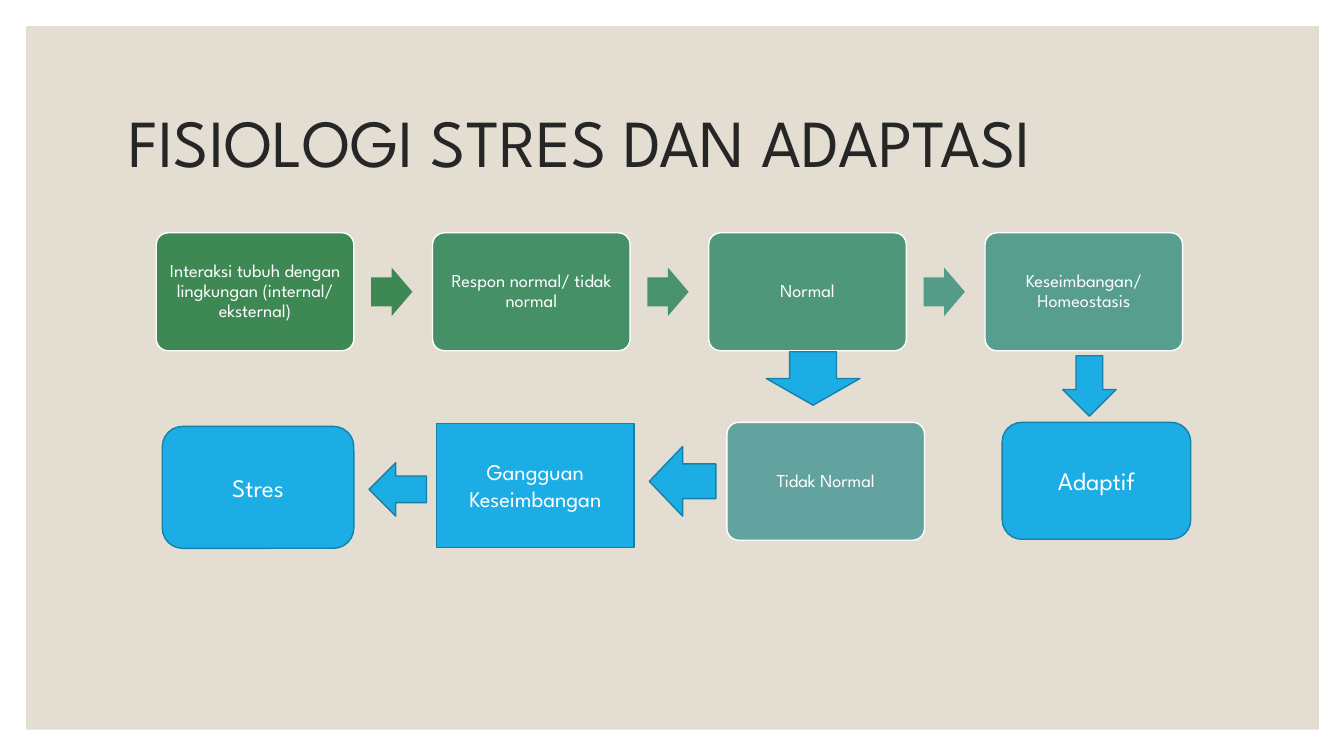
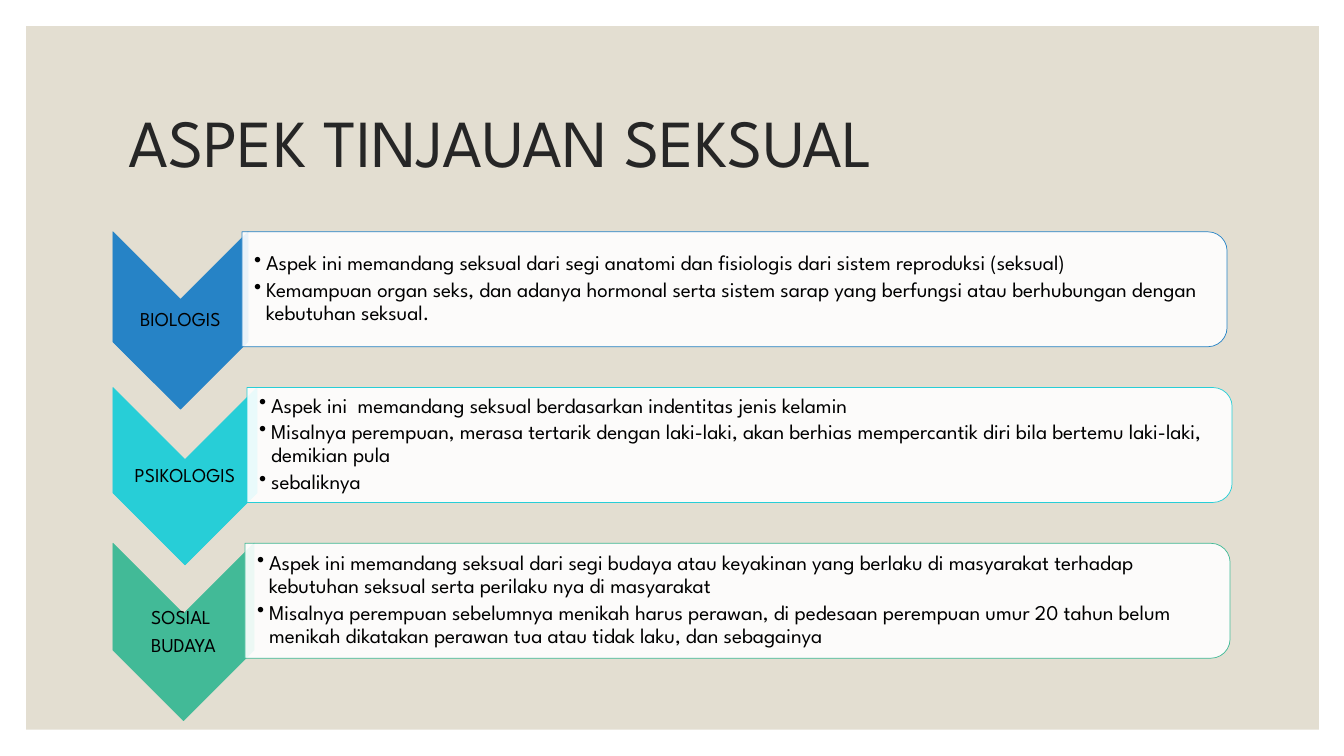
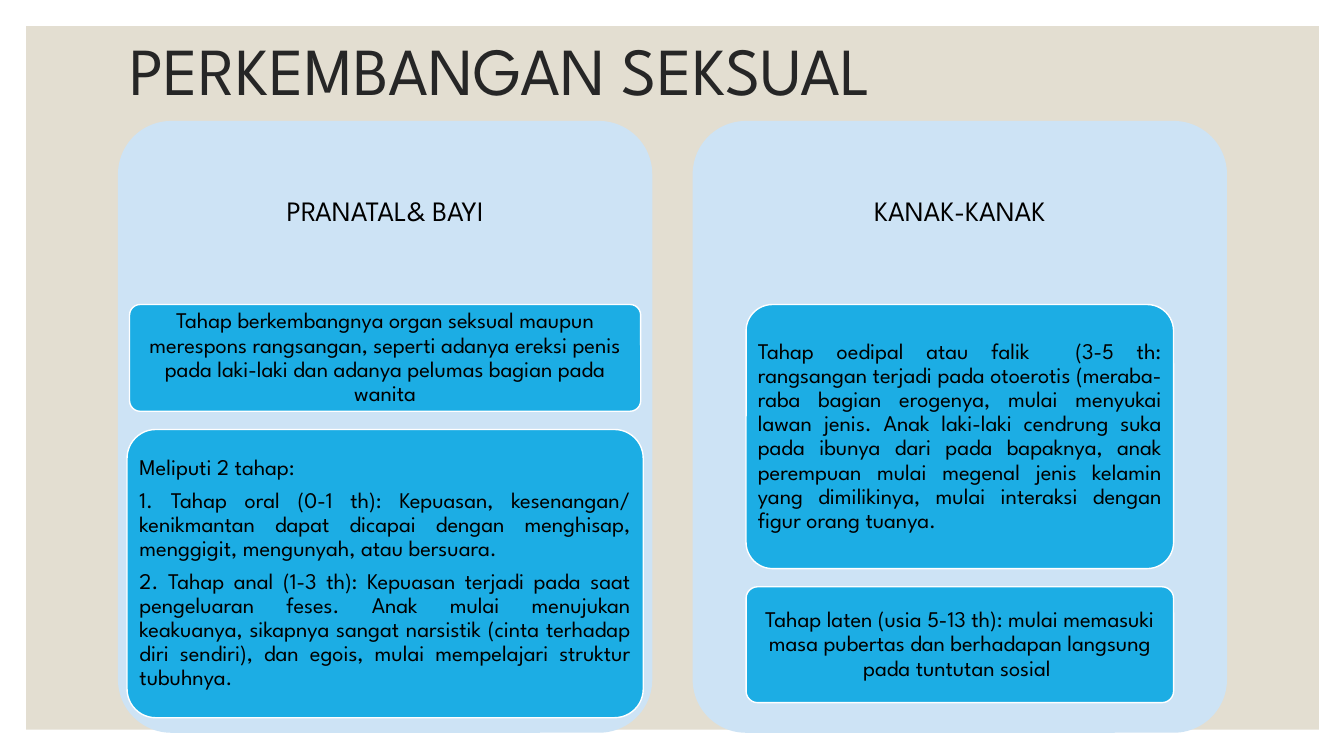
from dataclasses import dataclass

from lxml.etree import SubElement
from pptx import Presentation
from pptx.dml.color import RGBColor
from pptx.enum.shapes import MSO_SHAPE as Preset
from pptx.enum.text import MSO_ANCHOR as Anchor, MSO_AUTO_SIZE as AutoSize, PP_ALIGN as Align
from pptx.oxml.ns import qn
from pptx.util import Inches, Pt


@dataclass(frozen=True)
class Theme:
    """Colours, typeface and type sizes shared by the slides."""
    font: str = "League Spartan"
    backdrop: str = "E3DED1"
    title: str = "262626"
    ink: str = "000000"
    white: str = "FFFFFF"
    blue: str = "1CADE4"
    blue_edge: str = "1580A9"
    pale_blue: str = "CDE3F5"
    steps: tuple = ("3E8853", "469067", "4E977B", "579E8E")
    step_arrows: tuple = ("3E8853", "49926E", "549C88")
    abnormal: str = "62A39F"
    title_size: int = 48
    heading_size: int = 20
    outcome_size: int = 18
    card_size: int = 16
    aspect_size: int = 15
    label_size: int = 14
    step_size: int = 13


THEME = Theme()
TITLE_BOX = (1.17, 0.7, 11, 1.5)


def apply(target, values):
    """Set each attribute in a dict of format values."""
    for name, value in values.items():
        setattr(target, name, value)


def write(frame, texts, size, color, align=Align.CENTER, insets=(0.1, 0.05, 0.1, 0.05),
          spacing=0.9, after=0, bullet_indent=None):
    """Fill a text frame with evenly formatted paragraphs."""
    left, top, right, bottom = map(Inches, insets)
    apply(frame, dict(word_wrap=True, auto_size=AutoSize.NONE, vertical_anchor=Anchor.MIDDLE,
                      margin_left=left, margin_top=top, margin_right=right, margin_bottom=bottom))
    frame.text = "\n".join(texts)
    for paragraph in frame.paragraphs:
        apply(paragraph, dict(alignment=align, line_spacing=spacing,
                              space_before=Pt(0), space_after=Pt(after)))
        for run in paragraph.runs:
            apply(run.font, dict(name=THEME.font, size=Pt(size), bold=False))
            run.font.color.rgb = RGBColor.from_string(color)
        if bullet_indent:
            properties = paragraph._p.get_or_add_pPr()
            properties.set("marL", str(Inches(bullet_indent)))
            properties.set("indent", str(-Inches(bullet_indent)))
            SubElement(properties, qn("a:buChar")).set("char", "•")


def add_block(slide, preset, box, fill, edge=None, edge_width=1, adjust=(), rotation=0, opacity=None):
    """Add a flat preset shape with an optional outline."""
    block = slide.shapes.add_shape(preset, *map(Inches, box))
    block.shadow.inherit = False
    block.rotation = rotation
    block.fill.solid()
    block.fill.fore_color.rgb = RGBColor.from_string(fill)
    if opacity:
        tint = block.fill._xPr.find(qn("a:solidFill"))[0]
        SubElement(tint, qn("a:alpha")).set("val", str(opacity * 1000))
    if edge:
        block.line.color.rgb = RGBColor.from_string(edge)
        block.line.width = Pt(edge_width)
    else:
        block.line.fill.background()
    for index, value in enumerate(adjust):
        block.adjustments[index] = value
    return block


def add_turned(slide, preset, box, fill, edge, **options):
    """Add a block turned a quarter clockwise so that it occupies the box."""
    left, top, width, height = box
    shift = (width - height) / 2
    return add_block(slide, preset, (left + shift, top - shift, height, width), fill, edge,
                     edge_width=0.5, rotation=90, **options)


def add_label(slide, box, texts, size, **options):
    """Add dark text without a shape behind it."""
    label = slide.shapes.add_textbox(*map(Inches, box))
    write(label.text_frame, texts, size, THEME.ink, **options)


def add_titled_slide(deck, title, box=TITLE_BOX):
    """Add a title-only slide and format its title."""
    slide = deck.slides.add_slide(deck.slide_layouts[5])
    heading = slide.shapes.title
    left, top, width, height = map(Inches, box)
    apply(heading, dict(left=left, top=top, width=width, height=height))
    write(heading.text_frame, [title], THEME.title_size, THEME.title, align=Align.LEFT)
    return slide


def set_backdrop(deck, slide):
    """Put the sand-coloured field on the shared layout."""
    field = add_block(slide, Preset.RECTANGLE, (0.26, 0.26, 12.82, 6.98), THEME.backdrop)
    deck.slide_layouts[5].shapes.element.insert(2, field.element)


def add_step(slide, box, text, fill):
    """Add one green rounded step."""
    step = add_block(slide, Preset.ROUNDED_RECTANGLE, box, fill, THEME.white, adjust=[0.1])
    write(step.text_frame, [text], THEME.step_size, THEME.white, insets=(0.05,) * 4)


def add_process(slide, box, texts):
    """Spread steps across the box with arrows in the gaps."""
    left, top, width, height = box
    step_width, arrow_width, arrow_height = 1.96, 0.41, 0.48
    pitch = (width - step_width) / (len(texts) - 1)
    for index, (text, fill) in enumerate(zip(texts, THEME.steps)):
        add_step(slide, (left + index * pitch, top, step_width, height), text, fill)
    for index, fill in enumerate(THEME.step_arrows):
        arrow_box = (left + index * pitch + 2.13, top + (height - arrow_height) / 2,
                     arrow_width, arrow_height)
        add_block(slide, Preset.RIGHT_ARROW, arrow_box, fill, adjust=[0.6, 0.5])


def add_outcomes(slide, box):
    """Add the lower row of outcomes and the blue arrows that lead to it."""
    left, top = box[:2]
    add_step(slide, (left + 5.66, top + 0.7, 1.96, 1.17), "Tidak Normal", THEME.abnormal)
    outcomes = (
        (Preset.RECTANGLE, (2.78, 0.71, 1.96, 1.23), "Gangguan Keseimbangan", THEME.card_size),
        (Preset.ROUNDED_RECTANGLE, (0.06, 0.74, 1.9, 1.21), "Stres", THEME.outcome_size),
        (Preset.ROUNDED_RECTANGLE, (8.39, 0.7, 1.87, 1.16), "Adaptif", THEME.outcome_size),
        (Preset.DOWN_ARROW, (6.05, 0, 0.93, 0.53), "", 0),
        (Preset.LEFT_ARROW, (4.89, 0.94, 0.66, 0.69), "", 0),
        (Preset.LEFT_ARROW, (2.11, 1.1, 0.57, 0.53), "", 0),
        (Preset.DOWN_ARROW, (8.99, 0.04, 0.53, 0.6), "", 0),
    )
    for preset, (x, y, width, height), text, size in outcomes:
        block = add_block(slide, preset, (left + x, top + y, width, height),
                          THEME.blue, THEME.blue_edge)
        if text:
            write(block.text_frame, [text], size, THEME.white, spacing=1.0)


def add_aspect(slide, box, chevron_width, panel_left, color, label, points):
    """Add a labelled chevron and its panel of bullet points."""
    left, top, panel_width, chevron_height = box
    add_turned(slide, Preset.CHEVRON, (left, top, chevron_width, chevron_height), color, color)
    label_box = (left, top + chevron_width / 2, chevron_width, chevron_height - chevron_width)
    add_label(slide, label_box, label, THEME.label_size, insets=(0.01,) * 4, after=5)
    add_turned(slide, Preset.ROUND_2_SAME_RECTANGLE, (panel_left, top, panel_width, 1.14),
               THEME.white, color, opacity=90)
    add_label(slide, (panel_left, top + 0.05, panel_width - 0.06, 1.03), points,
              THEME.aspect_size, align=Align.LEFT, insets=(0.12, 0.01, 0.01, 0.01),
              after=3, bullet_indent=0.12)


def add_phase(slide, box, heading, card_width, cards):
    """Add a pale column with a heading and cards centred below it."""
    left, top, width, height = box
    add_block(slide, Preset.ROUNDED_RECTANGLE, box, THEME.pale_blue, adjust=[0.1])
    add_label(slide, (left, top, width, height * 0.3), [heading], THEME.heading_size,
              insets=(0.08,) * 4)
    card_top = top + height * 0.3
    for card_height, extra_width, align, texts in cards:
        span = card_width + extra_width
        card = add_block(slide, Preset.ROUNDED_RECTANGLE,
                         (left + (width - span) / 2, card_top, span, card_height),
                         THEME.blue, THEME.white, adjust=[0.1])
        write(card.text_frame, texts, THEME.card_size, THEME.ink, align=align,
              insets=(0.04, 0.03, 0.04, 0.03), after=6)
        card_top += card_height + 0.18


def build_stress(deck):
    """Build the stress and adaptation flow."""
    slide = add_titled_slide(deck, "FISIOLOGI STRES DAN ADAPTASI")
    set_backdrop(deck, slide)
    add_process(slide, (1.55, 2.31, 10.18, 1.17), (
        "Interaksi tubuh dengan lingkungan (internal/ eksternal)",
        "Respon normal/ tidak normal",
        "Normal",
        "Keseimbangan/ Homeostasis",
    ))
    add_outcomes(slide, (1.55, 3.49, 10.26, 1.95))


def build_aspects(deck):
    """Build the three aspects of sexuality."""
    slide = add_titled_slide(deck, "ASPEK TINJAUAN SEKSUAL")
    aspects = (
        (1.34, 2.4, "2683C6", ["BIOLOGIS"], [
            "Aspek ini memandang seksual dari segi anatomi dan fisiologis dari sistem reproduksi (seksual)",
            "Kemampuan organ seks, dan adanya hormonal serta sistem sarap yang berfungsi atau "
            "berhubungan dengan kebutuhan seksual.",
        ]),
        (1.43, 2.45, "27CED7", ["PSIKOLOGIS"], [
            "Aspek ini  memandang seksual berdasarkan indentitas jenis kelamin",
            "Misalnya perempuan, merasa tertarik dengan laki-laki, akan berhias mempercantik diri "
            "bila bertemu laki-laki, demikian pula",
            "sebaliknya",
        ]),
        (1.4, 2.43, "42BA97", ["SOSIAL ", "BUDAYA"], [
            "Aspek ini memandang seksual dari segi budaya atau keyakinan yang berlaku di masyarakat "
            "terhadap kebutuhan seksual serta perilaku nya di masyarakat",
            "Misalnya perempuan sebelumnya menikah harus perawan, di pedesaan perempuan umur 20 tahun "
            "belum menikah dikatakan perawan tua atau tidak laku, dan sebagainya",
        ]),
    )
    for index, aspect in enumerate(aspects):
        add_aspect(slide, (1.12, 2.3 + index * 1.545, 9.77, 1.76), *aspect)


def build_development(deck):
    """Build the two phases of sexual development."""
    slide = add_titled_slide(deck, "PERKEMBANGAN SEKSUAL", (1.18, 0.26, 11, 0.94))
    phases = (
        ("PRANATAL& BAYI", 5.07, (
            (1.06, 0, Align.CENTER, [
                "Tahap berkembangnya organ seksual maupun merespons rangsangan, seperti adanya ereksi "
                "penis pada laki-laki dan adanya pelumas bagian pada wanita"]),
            (2.86, 0.05, Align.JUSTIFY, [
                "Meliputi 2 tahap: ",
                "1. Tahap oral (0-1 th): Kepuasan, kesenangan/ kenikmantan dapat dicapai dengan "
                "menghisap, menggigit, mengunyah, atau bersuara.",
                "2. Tahap anal (1-3 th): Kepuasan terjadi pada saat pengeluaran feses. Anak mulai "
                "menujukan keakuanya, sikapnya sangat narsistik (cinta terhadap diri sendiri), dan "
                "egois, mulai mempelajari struktur tubuhnya."]),
        )),
        ("KANAK-KANAK", 4.24, (
            (2.62, 0, Align.JUSTIFY, [
                "Tahap oedipal atau falik  (3-5 th: rangsangan terjadi pada otoerotis (meraba-raba "
                "bagian erogenya, mulai menyukai lawan jenis. Anak laki-laki cendrung suka pada ibunya "
                "dari pada bapaknya, anak perempuan mulai megenal jenis kelamin yang dimilikinya, "
                "mulai interaksi dengan figur orang tuanya."]),
            (1.15, 0, Align.CENTER, [
                "Tahap laten (usia 5-13 th): mulai memasuki masa pubertas dan berhadapan langsung "
                "pada tuntutan sosial "]),
        )),
    )
    for index, phase in enumerate(phases):
        add_phase(slide, (1.17 + index * 5.7, 1.2, 5.3, 6.07), *phase)


def main():
    """Build and save the deck."""
    deck = Presentation()
    apply(deck, dict(slide_width=Inches(13.33), slide_height=Inches(7.5)))
    for build in (build_stress, build_aspects, build_development):
        build(deck)
    deck.save("out.pptx")


if __name__ == "__main__":
    main()
